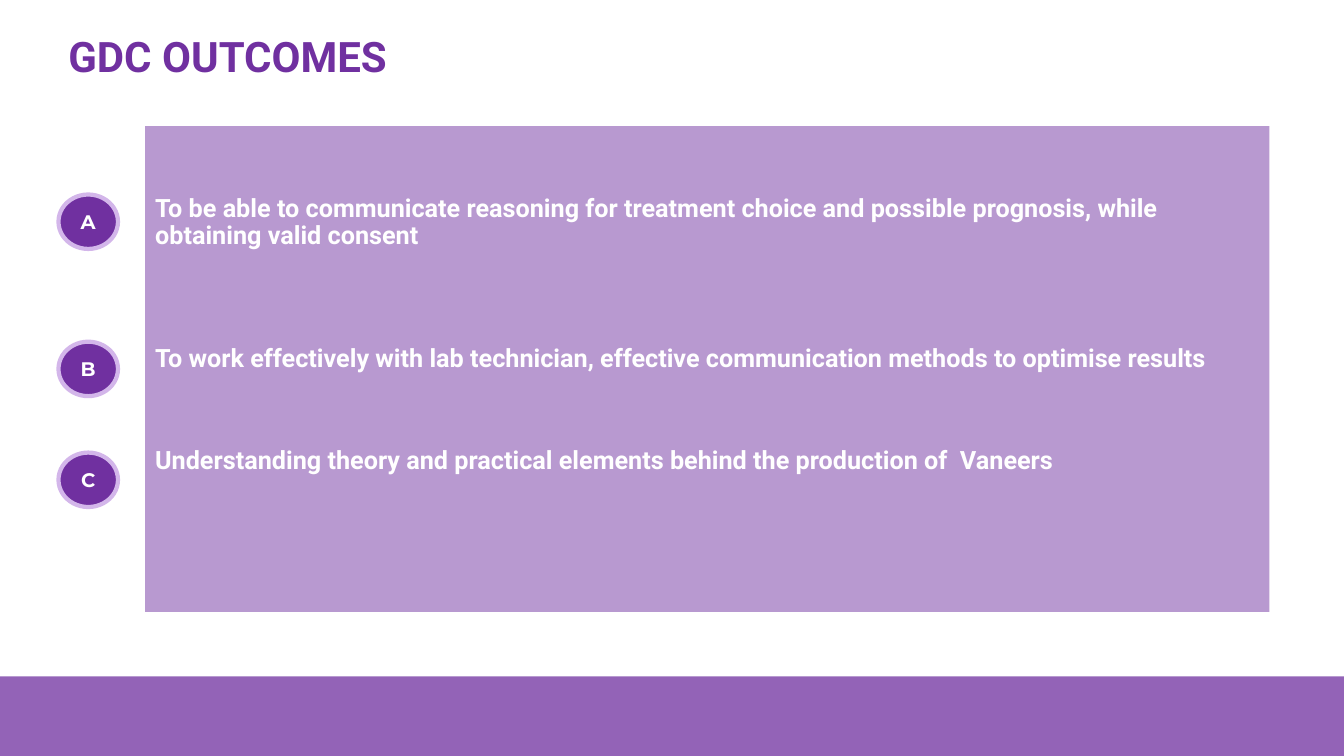
import pptx
import pptx.util
import pptx.dml.color
import pptx.enum.shapes
import pptx.enum.text
import pptx.oxml.ns
import lxml.etree

Inches, Pt = pptx.util.Inches, pptx.util.Pt
RGB = pptx.dml.color.RGBColor
KIND = pptx.enum.shapes.MSO_SHAPE
ALIGN = pptx.enum.text.PP_ALIGN
ANCHOR = pptx.enum.text.MSO_ANCHOR

PURPLE = RGB(0x70, 0x30, 0xA0)
LILAC = RGB(0xD3, 0xB6, 0xEA)
WHITE = RGB(0xFF, 0xFF, 0xFF)

WIDE, HIGH = 13.33, 7.5

# Letter, badge top in inches, space before in points, wording
GOALS = [
    ("A", 1.93, 0, "To be able to communicate reasoning for treatment choice and "
                   "possible prognosis, while obtaining valid consent"),
    ("B", 3.39, 68, "To work effectively with lab technician, effective "
                    "communication methods to optimise results"),
    ("C", 4.49, 54, "Understanding theory and practical elements behind the "
                    "production of  Vaneers"),
]


def add_form(slide, kind, box, alpha=100):
    """Add a purple shape, see-through when alpha is below 100."""
    form = slide.shapes.add_shape(kind, *map(Inches, box))
    form.shadow.inherit = False
    form.fill.solid()
    form.fill.fore_color.rgb = PURPLE
    form.line.fill.background()
    if alpha < 100:
        tone = form.fill._xPr.find(".//" + pptx.oxml.ns.qn("a:srgbClr"))
        node = lxml.etree.SubElement(tone, pptx.oxml.ns.qn("a:alpha"))
        node.set("val", str(alpha * 1000))
    return form


def set_text(para, text, font, size, color, align=ALIGN.LEFT):
    para.text = text
    para.alignment = align
    face = para.runs[0].font
    face.name, face.size, face.bold = font, Pt(size), True
    face.color.rgb = color


def add_title(slide, box):
    frame = slide.shapes.add_textbox(*map(Inches, box)).text_frame
    frame.word_wrap = True
    frame.vertical_anchor = ANCHOR.MIDDLE
    para = frame.paragraphs[0]
    set_text(para, "GDC OUTCOMES", "Roboto", 30, PURPLE)
    para.line_spacing = 0.9


def add_panel(slide, box):
    frame = add_form(slide, KIND.RECTANGLE, box, 49).text_frame
    frame.word_wrap = True
    frame.vertical_anchor = ANCHOR.TOP
    frame.margin_top = Inches(0.69)
    for i, (_, _, gap, text) in enumerate(GOALS):
        para = frame.add_paragraph() if i else frame.paragraphs[0]
        set_text(para, text, "Roboto", 18, WHITE)
        para.line_spacing = 0.9
        para.space_before = Pt(gap)


def add_badge(slide, box, letter):
    badge = add_form(slide, KIND.OVAL, box)
    badge.line.color.rgb = LILAC
    badge.line.width = Pt(3)
    frame = badge.text_frame
    frame.vertical_anchor = ANCHOR.MIDDLE
    set_text(frame.paragraphs[0], letter, "Montserrat", 14, WHITE, ALIGN.CENTER)


def main():
    deck = pptx.Presentation()
    deck.slide_width, deck.slide_height = Inches(WIDE), Inches(HIGH)
    slide = deck.slides.add_slide(deck.slide_layouts[6])

    # Footer band
    band = 0.79
    add_form(slide, KIND.RECTANGLE, (0, HIGH - band, WIDE, band), 75)

    # Heading and outcomes
    left = 0.58
    add_title(slide, (left, 0.17, 9.26, 0.82))
    add_panel(slide, (1.44, 1.25, 11.15, 4.82))

    # Letter badges beside the panel
    for letter, top, _, _ in GOALS:
        add_badge(slide, (left, top, 0.59, 0.54), letter)

    deck.save("out.pptx")


if __name__ == "__main__":
    main()
